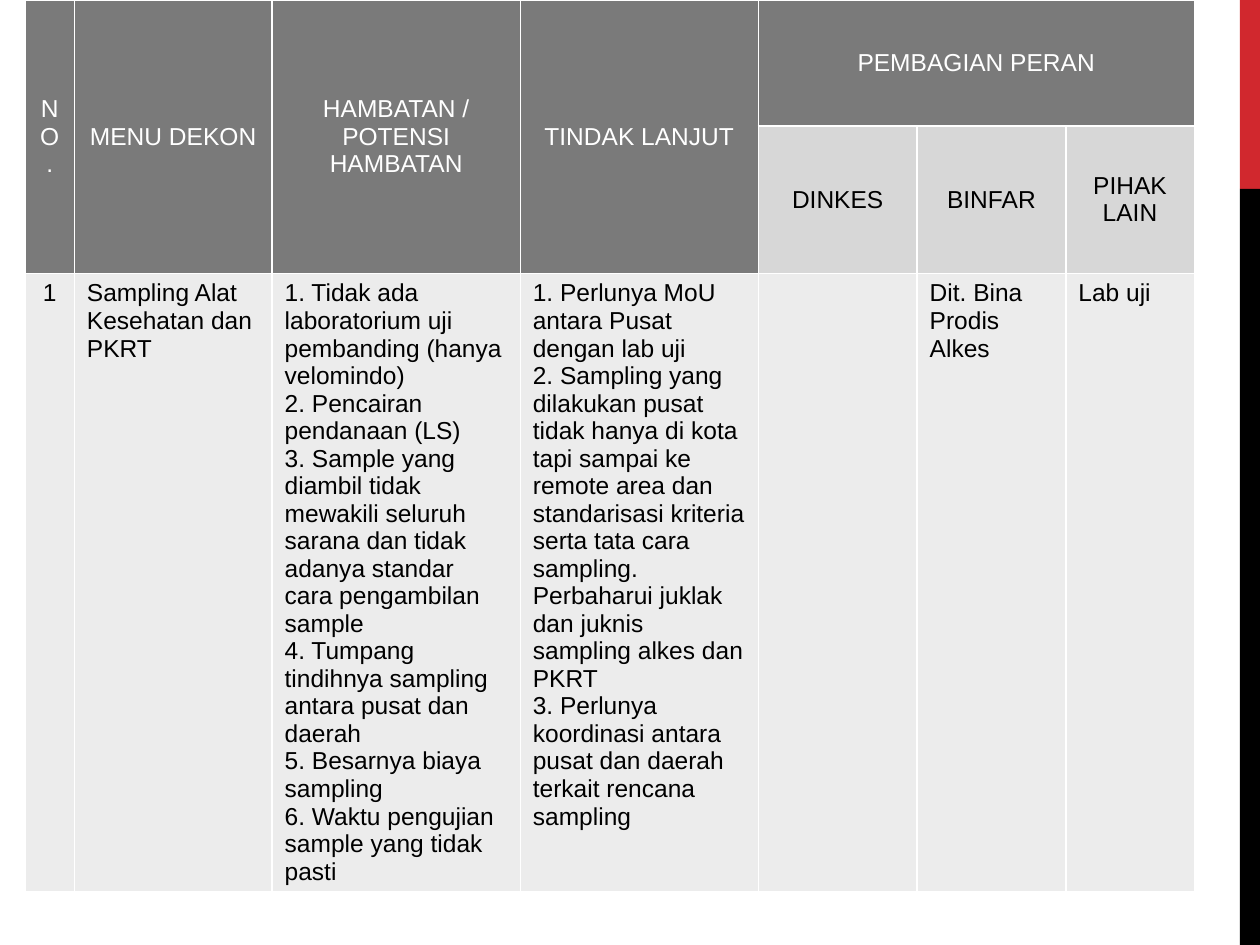
from dataclasses import dataclass

from lxml import etree
from pptx import Presentation
from pptx import util as u
from pptx.dml.color import RGBColor
from pptx.enum import shapes, text
from pptx.oxml import ns

WHITE, BLACK, RED = "FFFFFF", "000000", "D1282E"
HEADER, SUBHEADER, BODY = "7A7A7A", "D7D7D7", "ECECEC"
COLUMN_WIDTHS = [0.39, 1.57, 1.97, 1.89, 1.26, 1.18, 1.02]
ROW_HEIGHTS = [1, 1.17, 4.91]


@dataclass
class Band:
    top: float
    height: float
    fill: str


@dataclass
class Entry:
    row: int
    column: int
    paragraphs: list[str]
    fill: str
    color: str = BLACK
    centered: bool = False
    middle: bool = False
    row_span: int = 1
    column_span: int = 1


def rgb(color: str) -> RGBColor:
    return RGBColor.from_string(color)


def draw_band(slide, band: Band) -> None:
    bar = slide.shapes.add_shape(
        shapes.MSO_SHAPE.RECTANGLE, u.Inches(9.84), u.Inches(band.top),
        u.Inches(0.16), u.Inches(band.height))
    bar.shadow.inherit = False
    bar.fill.solid()
    bar.fill.fore_color.rgb = rgb(band.fill)
    bar.line.fill.background()


def draw_borders(cell, color: str = WHITE, points: float = 1) -> None:
    properties = cell._tc.get_or_add_tcPr()
    for position, side in enumerate(("lnL", "lnR", "lnT", "lnB")):
        border = etree.Element(ns.qn(f"a:{side}"), w=str(u.Pt(points)))
        fill = etree.SubElement(border, ns.qn("a:solidFill"))
        etree.SubElement(fill, ns.qn("a:srgbClr"), val=color)
        properties.insert(position, border)


def fill_cell(table, entry: Entry) -> None:
    cell = table.cell(entry.row, entry.column)
    last_row = entry.row + entry.row_span - 1
    last_column = entry.column + entry.column_span - 1
    if (last_row, last_column) != (entry.row, entry.column):
        cell.merge(table.cell(last_row, last_column))
    for row in range(entry.row, last_row + 1):
        for column in range(entry.column, last_column + 1):
            part = table.cell(row, column)
            part.fill.solid()
            part.fill.fore_color.rgb = rgb(entry.fill)
            draw_borders(part)

    if entry.middle:
        cell.vertical_anchor = text.MSO_ANCHOR.MIDDLE
    frame = cell.text_frame
    for index, words in enumerate(entry.paragraphs):
        paragraph = frame.add_paragraph() if index else frame.paragraphs[0]
        if entry.centered:
            paragraph.alignment = text.PP_ALIGN.CENTER
        run = paragraph.add_run()
        run.text = words
        run.font.name = "Arial"
        run.font.size = u.Pt(14)
        run.font.bold = False
        run.font.color.rgb = rgb(entry.color)


def heading(row: int, column: int, words: str, fill: str, color: str,
            row_span: int = 1, column_span: int = 1) -> Entry:
    return Entry(row, column, [words], fill, color, True, True,
                 row_span, column_span)


# Table content
MAIN_HEADINGS = ["NO.", "MENU DEKON", "HAMBATAN / POTENSI HAMBATAN", "TINDAK LANJUT"]
ROLE_HEADINGS = ["DINKES", "BINFAR", "PIHAK LAIN"]
SAMPLING_ROW = [
    ["1"],
    ["Sampling Alat Kesehatan dan PKRT"],
    [
        "1. Tidak ada laboratorium uji pembanding (hanya velomindo)",
        "2. Pencairan pendanaan (LS)",
        "3. Sample yang diambil tidak mewakili seluruh sarana dan tidak "
        "adanya standar cara pengambilan sample",
        "4. Tumpang tindihnya sampling antara pusat dan daerah",
        "5. Besarnya biaya sampling",
        "6. Waktu pengujian sample yang tidak pasti",
    ],
    [
        "1. Perlunya MoU antara Pusat dengan lab uji",
        "2. Sampling yang dilakukan pusat tidak hanya di kota tapi sampai ke "
        "remote area dan standarisasi kriteria serta tata cara sampling. "
        "Perbaharui juklak dan juknis sampling alkes dan PKRT",
        "3. Perlunya koordinasi antara pusat dan daerah terkait rencana sampling",
    ],
    [],
    ["Dit. Bina Prodis Alkes"],
    ["Lab uji"],
]


def main() -> None:
    deck = Presentation()
    deck.slide_width, deck.slide_height = u.Inches(10), u.Inches(7.5)
    slide = deck.slides.add_slide(deck.slide_layouts[6])

    # Bands on the right edge
    for band in (Band(0, 1.5, RED), Band(1.5, 6, BLACK)):
        draw_band(slide, band)

    # Table grid
    table = slide.shapes.add_table(
        len(ROW_HEIGHTS), len(COLUMN_WIDTHS), u.Inches(0.2), u.Inches(0),
        u.Inches(sum(COLUMN_WIDTHS)), u.Inches(sum(ROW_HEIGHTS))).table
    for column, width in zip(table.columns, COLUMN_WIDTHS):
        column.width = u.Inches(width)
    for row, height in zip(table.rows, ROW_HEIGHTS):
        row.height = u.Inches(height)

    # Headings, then the sampling row
    first_role = len(MAIN_HEADINGS)
    entries = [heading(0, column, words, HEADER, WHITE, row_span=2)
               for column, words in enumerate(MAIN_HEADINGS)]
    entries.append(heading(0, first_role, "PEMBAGIAN PERAN", HEADER, WHITE,
                           column_span=len(ROLE_HEADINGS)))
    entries += [heading(1, column, words, SUBHEADER, BLACK)
                for column, words in enumerate(ROLE_HEADINGS, first_role)]
    entries += [Entry(2, column, paragraphs, BODY, centered=column == 0)
                for column, paragraphs in enumerate(SAMPLING_ROW)]
    for entry in entries:
        fill_cell(table, entry)

    deck.save("out.pptx")


if __name__ == "__main__":
    main()
